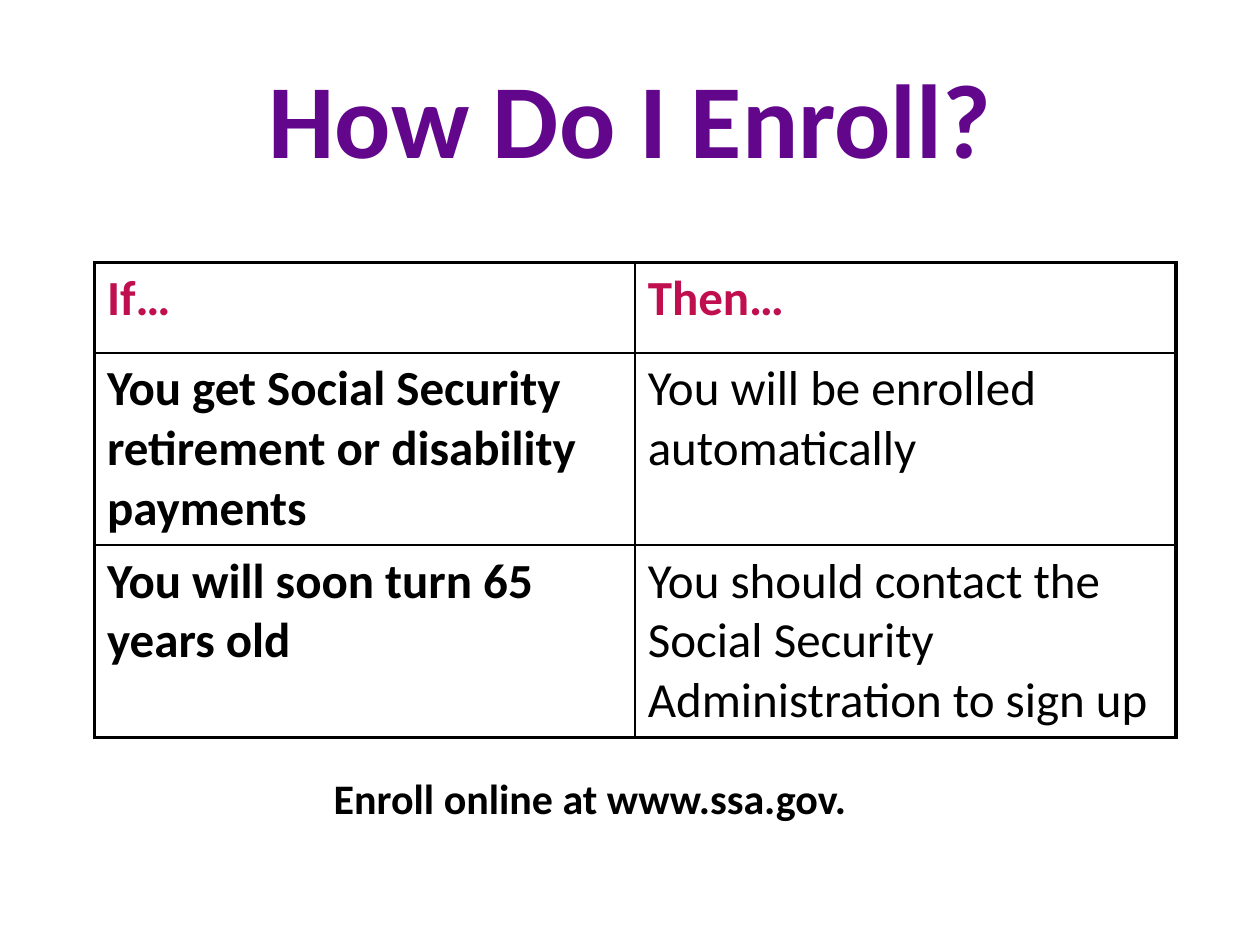
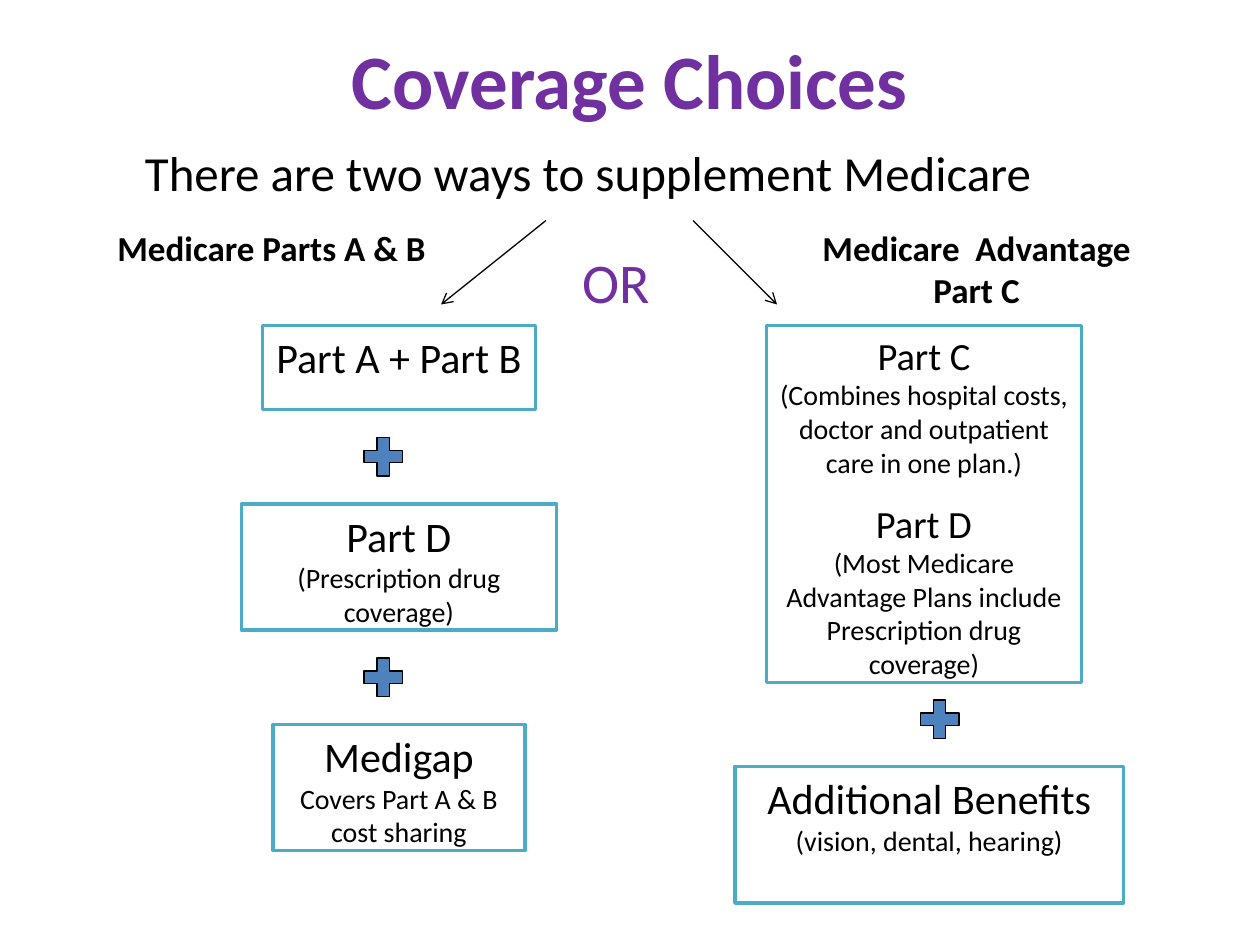
"""Build two slides on Medicare enrolment and coverage choices."""
from dataclasses import dataclass
from typing import NamedTuple

import pptx
import pptx.dml.color
import pptx.enum.shapes
import pptx.enum.text
import pptx.oxml
import pptx.oxml.ns
import pptx.util

RGBColor = pptx.dml.color.RGBColor
Pt = pptx.util.Pt
PRESET = pptx.enum.shapes.MSO_SHAPE
ALIGN = pptx.enum.text.PP_ALIGN
ANCHOR = pptx.enum.text.MSO_ANCHOR

BLACK = RGBColor(0x00, 0x00, 0x00)
WHITE = RGBColor(0xFF, 0xFF, 0xFF)
VIOLET = RGBColor(0x62, 0x07, 0x8C)
PURPLE = RGBColor(0x70, 0x30, 0xA0)
CRIMSON = RGBColor(0xC0, 0x0F, 0x4F)
TEAL = RGBColor(0x4B, 0xAC, 0xC6)
BLUE = RGBColor(0x4F, 0x81, 0xBD)

FONT = "Calibri"
GRID = pptx.util.Inches(1) / 12
COLUMNS, ROWS = 120, 90
TITLE_ONLY = 5
PLUS_SIZE = 5
OUTER_EDGE, INNER_EDGE = 2.25, 1


class Area(NamedTuple):
    col: float
    row: float
    cols: float
    rows: float


class Line(NamedTuple):
    text: str
    size: float
    color: RGBColor = BLACK
    bold: bool = False
    gap: float = 0


@dataclass(frozen=True)
class Label:
    area: Area
    line: Line
    align: ALIGN = ALIGN.CENTER


@dataclass(frozen=True)
class PlanBox:
    area: Area
    lines: tuple[Line, ...]


class Arrow(NamedTuple):
    start_col: float
    start_row: float
    end_col: float
    end_row: float


ENROLL_TABLE = Area(9, 25, 103, 44.2)
ENROLL_ROWS = (8.6, 17.8, 17.8)
ENROLL_CASES = (
    ("If…", "Then…"),
    ("You get Social Security retirement or disability payments",
     "You will be enrolled automatically"),
    ("You will soon turn 65 years old",
     "You should contact the Social Security Administration to sign up"),
)
ENROLL_ONLINE = Label(Area(30.6, 73, 52, 6),
                      Line("Enroll online at www.ssa.gov.", 24, bold=True), ALIGN.LEFT)

CHOICE_LABELS = (
    Label(Area(5, 13, 102, 57), Line("There are two ways to supplement Medicare", 28)),
    Label(Area(10, 21, 36, 5.3), Line("Medicare Parts A & B", 20, bold=True), ALIGN.LEFT),
    Label(Area(77, 21, 32, 9.3), Line("Medicare  Advantage Part C", 20, bold=True)),
    Label(Area(53, 23, 11.4, 7.7), Line("OR", 32, PURPLE)),
)
CHOICE_ARROWS = (Arrow(52, 21, 42, 29), Arrow(66, 21, 74, 29))
PLAN_BOXES = (
    PlanBox(Area(25, 31, 26, 8), (Line("Part A + Part B", 24),)),
    PlanBox(Area(23, 48, 30, 12),
            (Line("Part D", 24), Line("(Prescription drug coverage)", 16))),
    PlanBox(Area(26, 69, 24, 12),
            (Line("Medigap", 24), Line("Covers Part A & B cost sharing", 16))),
    PlanBox(Area(73, 31, 30, 34), (
        Line("Part C", 22),
        Line("(Combines hospital costs, doctor and outpatient care in one plan.)", 16),
        Line("Part D", 22, gap=12),
        Line("(Most Medicare Advantage Plans include Prescription drug coverage)", 16))),
    PlanBox(Area(70, 73, 37, 13),
            (Line("Additional Benefits", 24), Line("(vision, dental, hearing)", 16))),
)
PLUS_PLACES = ((34, 41), (34, 62), (87, 66))


def on_grid(*units: float) -> list[int]:
    """Turn grid units into slide lengths."""
    return [round(unit * GRID) for unit in units]


def write_lines(frame, lines: tuple[Line, ...], align: ALIGN) -> None:
    """Fill a text frame with one formatted paragraph per line."""
    frame.word_wrap = True
    frame.text = "\n".join(line.text for line in lines)
    for paragraph, line in zip(frame.paragraphs, lines):
        paragraph.alignment = align
        paragraph.space_before = Pt(line.gap)
        for run in paragraph.runs:
            run.font.name = FONT
            run.font.size = Pt(line.size)
            run.font.bold = line.bold
            run.font.color.rgb = line.color


def add_titled_slide(deck, area: Area, title: Line):
    """Add a title-only slide and place its title."""
    slide = deck.slides.add_slide(deck.slide_layouts[TITLE_ONLY])
    heading = slide.shapes.title
    heading.left, heading.top, heading.width, heading.height = on_grid(*area)
    heading.text_frame.vertical_anchor = ANCHOR.MIDDLE
    write_lines(heading.text_frame, (title,), ALIGN.CENTER)
    return slide


def add_label(slide, label: Label) -> None:
    """Draw a text box."""
    box = slide.shapes.add_textbox(*on_grid(*label.area))
    write_lines(box.text_frame, (label.line,), label.align)


def add_preset(slide, preset: PRESET, area: Area, fill: RGBColor,
               edge: RGBColor, weight: float):
    """Draw a filled and outlined preset shape."""
    shape = slide.shapes.add_shape(preset, *on_grid(*area))
    shape.shadow.inherit = False
    shape.fill.solid()
    shape.fill.fore_color.rgb = fill
    shape.line.color.rgb = edge
    shape.line.width = Pt(weight)
    return shape


def add_plan_box(slide, plan: PlanBox) -> None:
    """Draw a box that names one part of the coverage."""
    shape = add_preset(slide, PRESET.FLOWCHART_PROCESS, plan.area, WHITE, TEAL, 2)
    shape.text_frame.vertical_anchor = ANCHOR.TOP
    write_lines(shape.text_frame, plan.lines, ALIGN.CENTER)


def add_arrow(slide, arrow: Arrow) -> None:
    """Draw a thin line with an open arrowhead at its end."""
    connector = slide.shapes.add_connector(
        pptx.enum.shapes.MSO_CONNECTOR.STRAIGHT, *on_grid(*arrow))
    connector.line.color.rgb = BLACK
    connector.line.width = Pt(0.75)
    properties = connector._element.spPr
    head = properties.find(pptx.oxml.ns.qn("a:ln")).makeelement(
        pptx.oxml.ns.qn("a:tailEnd"), {"type": "arrow"})
    properties.find(pptx.oxml.ns.qn("a:ln")).append(head)
    properties.append(properties.makeelement(pptx.oxml.ns.qn("a:effectLst"), {}))


def set_borders(cell, weights: dict[str, float]) -> None:
    """Give each named side of a cell a black border."""
    properties = cell._tc.get_or_add_tcPr()
    for position, (side, weight) in enumerate(weights.items()):
        properties.insert(position, pptx.oxml.parse_xml(
            f'<a:ln{side} {pptx.oxml.ns.nsdecls("a")} w="{Pt(weight)}">'
            f'<a:solidFill><a:srgbClr val="{BLACK}"/></a:solidFill></a:ln{side}>'))


def add_enroll_table(slide) -> None:
    """Draw the table that pairs each case with its enrolment step."""
    last_row, last_col = len(ENROLL_CASES) - 1, len(ENROLL_CASES[0]) - 1
    table = slide.shapes.add_table(
        last_row + 1, last_col + 1, *on_grid(*ENROLL_TABLE)).table
    table.first_row = table.horz_banding = False
    for r, (height, case) in enumerate(zip(ENROLL_ROWS, ENROLL_CASES)):
        table.rows[r].height = on_grid(height)[0]
        for c, text in enumerate(case):
            cell = table.cell(r, c)
            cell.fill.background()
            color = CRIMSON if r == 0 else BLACK
            write_lines(cell.text_frame,
                        (Line(text, 28, color, r == 0 or c == 0),), ALIGN.LEFT)
            on_edge = {"L": c == 0, "R": c == last_col, "T": r == 0, "B": r == last_row}
            set_borders(cell, {side: OUTER_EDGE if outer else INNER_EDGE
                               for side, outer in on_edge.items()})


def build_enroll_slide(deck) -> None:
    """Build the slide on how to enrol."""
    slide = add_titled_slide(deck, Area(6, 3.6, 108, 15),
                             Line("How Do I Enroll?", 60, VIOLET, True))
    add_enroll_table(slide)
    add_label(slide, ENROLL_ONLINE)


def build_choices_slide(deck) -> None:
    """Build the slide on the two ways to supplement coverage."""
    slide = add_titled_slide(deck, Area(9, 0, 102, 15),
                             Line("Coverage Choices", 44, PURPLE, True))
    for label in CHOICE_LABELS:
        add_label(slide, label)
    for arrow in CHOICE_ARROWS:
        add_arrow(slide, arrow)
    for plan in PLAN_BOXES:
        add_plan_box(slide, plan)
    for col, row in PLUS_PLACES:
        add_preset(slide, PRESET.MATH_PLUS, Area(col, row, PLUS_SIZE, PLUS_SIZE),
                   BLUE, BLACK, 0.75)


def main() -> None:
    """Build and save the deck."""
    deck = pptx.Presentation()
    deck.slide_width, deck.slide_height = on_grid(COLUMNS, ROWS)
    build_enroll_slide(deck)
    build_choices_slide(deck)
    deck.save("out.pptx")


if __name__ == "__main__":
    main()
